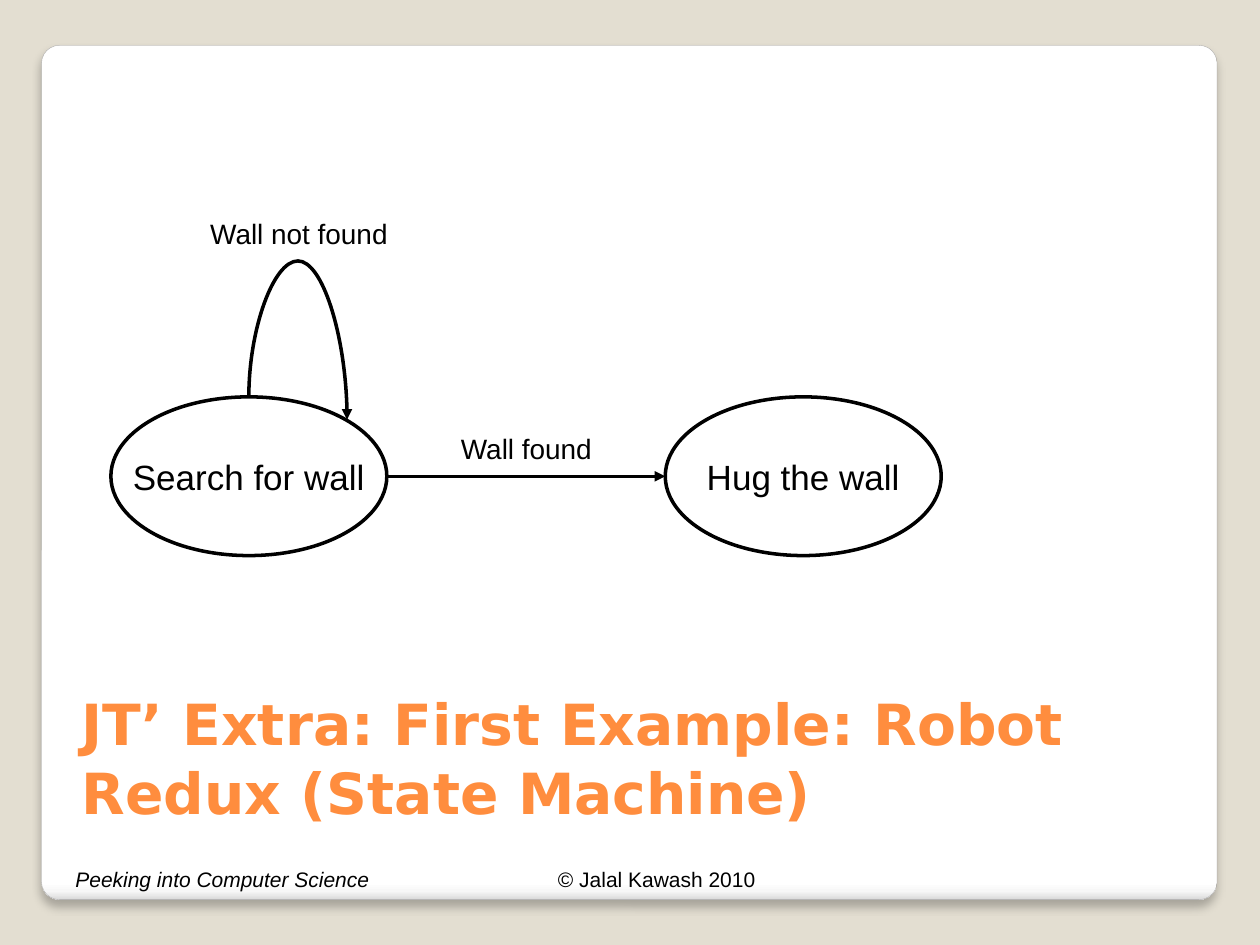
from lxml import etree
from pptx import Presentation
from pptx.dml.color import RGBColor
from pptx.enum import shapes, text
from pptx.oxml.ns import qn
from pptx.util import Inches, Pt

BLACK = RGBColor(0x00, 0x00, 0x00)
ORANGE = RGBColor(0xFF, 0x8D, 0x3E)
SAND = RGBColor(0xE3, 0xDE, 0xD1)
EDGE = RGBColor(0xA4, 0xA3, 0xA3)
WHITE = RGBColor(0xFF, 0xFF, 0xFF)
PANEL_STOPS = [(0, WHITE), (98, WHITE), (99, RGBColor(0xF7, 0xF7, 0xF7)),
               (100, RGBColor(0xDA, 0xDA, 0xDA))]


def add_xml(parent, tag, **attrs):
    return etree.SubElement(parent, qn(tag), {k: str(v) for k, v in attrs.items()})


def write(sp, words, size=12, font="Arial", color=BLACK, bold=False, italic=False,
          align=text.PP_ALIGN.LEFT, anchor=text.MSO_ANCHOR.TOP, wrap=True):
    tf = sp.text_frame
    tf.word_wrap = wrap
    tf.vertical_anchor = anchor
    p = tf.paragraphs[0]
    p.alignment = align
    r = p.add_run()
    r.text = words
    f = r.font
    f.name, f.size, f.bold, f.italic = font, Pt(size), bold, italic
    f.color.rgb = color


def add_label(s, box, words, **fmt):
    write(s.shapes.add_textbox(*map(Inches, box)), words, **fmt)


def add_panel(s, box):
    sp = s.shapes.add_shape(shapes.MSO_SHAPE.ROUNDED_RECTANGLE, *map(Inches, box))
    sp.adjustments[0] = 0.021
    sp.line.color.rgb = EDGE
    sp.line.width = Pt(0.16)
    sp.fill.gradient()
    sp.fill.gradient_angle = 270
    stops = sp._element.spPr.find(".//" + qn("a:gsLst"))
    stops.clear()
    for pos, color in PANEL_STOPS:
        add_xml(add_xml(stops, "a:gs", pos=pos * 1000), "a:srgbClr", val=color)
    sp.shadow.inherit = False
    shadow = add_xml(sp._element.spPr.find(qn("a:effectLst")), "a:outerShdw",
                     blurRad=Pt(5), dist=Pt(4), dir=90 * 60000, algn="tl", rotWithShape=0)
    add_xml(add_xml(shadow, "a:srgbClr", val=BLACK), "a:alpha", val=25000)


def add_state(s, box, name):
    sp = s.shapes.add_shape(shapes.MSO_SHAPE.OVAL, *map(Inches, box))
    sp.shadow.inherit = False
    sp.fill.background()
    sp.line.color.rgb = BLACK
    sp.line.width = Pt(2)
    write(sp, name, size=20, align=text.PP_ALIGN.CENTER,
          anchor=text.MSO_ANCHOR.MIDDLE, wrap=False)


def add_arrow(s, kind, x1, y1, x2, y2):
    cx = s.shapes.add_connector(kind, *map(Inches, (x1, y1, x2, y2)))
    cx.line.color.rgb = BLACK
    cx.line.width = Pt(2)
    add_xml(cx.line._get_or_add_ln(), "a:tailEnd", type="triangle")
    add_xml(cx._element.spPr, "a:effectLst")
    return cx


def add_loop(s, x1, y1, x2, y2, peak):
    """Curved arrow that rises from (x1, y1) to the height peak and drops to (x2, y2)."""
    rise, run = y2 - y1, x2 - x1
    mid_x, mid_y = (x1 + x2) / 2, (y1 + y2) / 2
    left, top = mid_x - rise / 2, mid_y - run / 2
    cx = add_arrow(s, shapes.MSO_CONNECTOR.CURVE, left, top, left + rise, top + run)
    spPr = cx._element.spPr
    xfrm = spPr.find(qn("a:xfrm"))
    xfrm.set("rot", str(90 * 60000))
    xfrm.set("flipV", "1")
    bend = round((peak - y1) / rise * 100000)
    guides = spPr.find(qn("a:prstGeom")).find(qn("a:avLst"))
    add_xml(guides, "a:gd", name="adj1", fmla=f"val {bend}")


def add_state_machine(s, left, top, width, height, gap):
    middle = top + height / 2
    right = left + width
    hug_left = right + gap
    add_state(s, (left, top, width, height), "Search for wall")
    add_state(s, (hug_left, top, width, height), "Hug the wall")
    start = left + width / 2
    add_loop(s, start, top, start + 0.78, top + 0.18, top - 1.08)
    add_label(s, (left + 0.69, top - 1.48, 1.65, 0.37), "Wall not found", size=16)
    add_arrow(s, shapes.MSO_CONNECTOR.STRAIGHT, right, middle, hug_left, middle)
    add_label(s, (right + 0.49, middle - 0.4, 1.28, 0.37), "Wall found", size=16)


def add_footer(s, top):
    add_label(s, (4.33, top, 1.78, 0.3), "© Jalal Kawash 2010", wrap=False)
    add_label(s, (0.5, top, 2.55, 0.3), "Peeking into Computer Science",
              italic=True, wrap=False)


def main():
    prs = Presentation()
    prs.slide_width, prs.slide_height = Inches(10), Inches(7.5)
    s = prs.slides.add_slide(prs.slide_layouts[6])
    s.background.fill.solid()
    s.background.fill.fore_color.rgb = SAND
    add_panel(s, (0.33, 0.36, 9.33, 6.78))
    add_footer(s, 6.83)
    add_label(s, (0.55, 5.45, 8.95, 1.15),
              "JT’ Extra: First Example: Robot Redux (State Machine)",
              size=32.4, font="DejaVu Sans", color=ORANGE, bold=True,
              anchor=text.MSO_ANCHOR.BOTTOM)
    add_state_machine(s, 0.88, 3.15, 2.19, 1.26, gap=2.21)
    prs.save("out.pptx")


if __name__ == "__main__":
    main()
